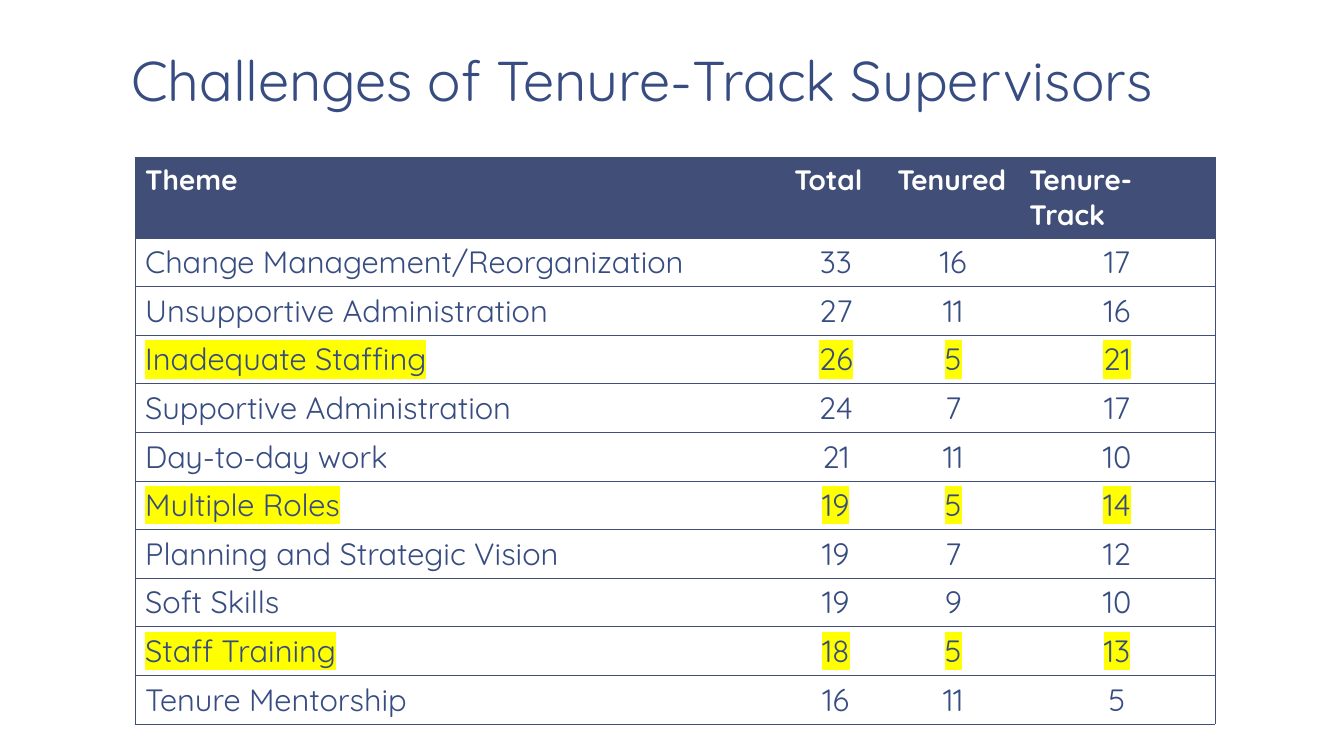
from lxml import etree
from pptx import Presentation
from pptx.dml.color import RGBColor
from pptx.enum.text import MSO_ANCHOR, MSO_AUTO_SIZE, PP_ALIGN
from pptx.oxml.ns import qn
from pptx.util import Inches, Pt

LEFT, CENTER = PP_ALIGN.LEFT, PP_ALIGN.CENTER
BOTTOM, NO_AUTOFIT = MSO_ANCHOR.BOTTOM, MSO_AUTO_SIZE.NONE

# Content
TITLE = "Challenges of Tenure-Track Supervisors"
HEADER = ("Theme", "Total", "Tenured", "Tenure-Track")
THEMES = [
    ("Change Management/Reorganization", 33, 16, 17),
    ("Unsupportive Administration", 27, 11, 16),
    ("Inadequate Staffing", 26, 5, 21),
    ("Supportive Administration", 24, 7, 17),
    ("Day-to-day work", 21, 11, 10),
    ("Multiple Roles", 19, 5, 14),
    ("Planning and Strategic Vision", 19, 7, 12),
    ("Soft Skills", 19, 9, 10),
    ("Staff Training", 18, 5, 13),
    ("Tenure Mentorship", 16, 11, 5),
]
HIGHLIGHTED = {"Inadequate Staffing", "Multiple Roles", "Staff Training"}

FONT = "Quicksand"
COLORS = {"text": "374C81", "header": "414E77", "white": "FFFFFF", "mark": "FFFF00"}
COL_WIDTHS = (6.44, 1.02, 1.31, 1.94)
HEADER_HEIGHT, ROW_HEIGHT = 0.8, 0.48


def rgb(name):
    return RGBColor.from_string(COLORS[name])


def style_run(r, size, color, bold=False):
    r.font.name = FONT
    r.font.size = Pt(size)
    r.font.bold = bold
    r.font.color.rgb = rgb(color)


def highlight(r):
    mark = etree.Element(qn("a:highlight"))
    etree.SubElement(mark, qn("a:srgbClr"), val=COLORS["mark"])
    r.font._element.find(qn("a:solidFill")).addnext(mark)


def set_borders(cell, visible):
    tcPr = cell._tc.get_or_add_tcPr()
    for side in "LRTB":
        ln = etree.SubElement(tcPr, qn("a:ln" + side), w=str(Pt(0.5)))
        if side in visible:
            fill = etree.SubElement(ln, qn("a:solidFill"))
            etree.SubElement(fill, qn("a:srgbClr"), val=COLORS["header"])
        else:
            etree.SubElement(ln, qn("a:noFill"))


prs = Presentation()
prs.slide_width, prs.slide_height = Inches(13.33), Inches(7.5)
s = prs.slides.add_slide(prs.slide_layouts[5])

# Title
title = s.shapes.title
title.left, title.top = Inches(1.17), Inches(0.38)
title.width, title.height = Inches(11.11), Inches(0.81)
tf = title.text_frame
tf.text = TITLE
tf.auto_size, tf.vertical_anchor = NO_AUTOFIT, BOTTOM
tf.margin_left = tf.margin_right = Inches(0.13)
tf.margin_top = tf.margin_bottom = Inches(0.07)
p = tf.paragraphs[0]
p.alignment, p.line_spacing = LEFT, 0.85
style_run(p.runs[0], 40, "text")

# Table grid
rows = [HEADER] + THEMES
last_col = len(HEADER) - 1
table = s.shapes.add_table(
    len(rows), len(HEADER), Inches(1.34), Inches(1.56), Inches(sum(COL_WIDTHS)),
    Inches(HEADER_HEIGHT + ROW_HEIGHT * len(THEMES))).table
table.horz_banding = False
for column, width in zip(table.columns, COL_WIDTHS):
    column.width = Inches(width)
for i, row in enumerate(table.rows):
    row.height = Inches(ROW_HEIGHT if i else HEADER_HEIGHT)

# Table cells
for i, values in enumerate(rows):
    for j, value in enumerate(values):
        cell = table.cell(i, j)
        cell.text = str(value)
        set_borders(cell, "TB" + ("L" if j == 0 else "R" if j == last_col else ""))
        cell.fill.solid()
        cell.fill.fore_color.rgb = rgb("white" if i else "header")
        p = cell.text_frame.paragraphs[0]
        p.alignment = CENTER if i and j else LEFT
        r = p.runs[0]
        if i:
            style_run(r, 22, "text")
        else:
            style_run(r, 20, "white", bold=True)
        if values[0] in HIGHLIGHTED:
            highlight(r)

# The last heading breaks after its hyphen
table.cell(0, last_col).margin_right = Inches(0.3)

prs.save("out.pptx")
